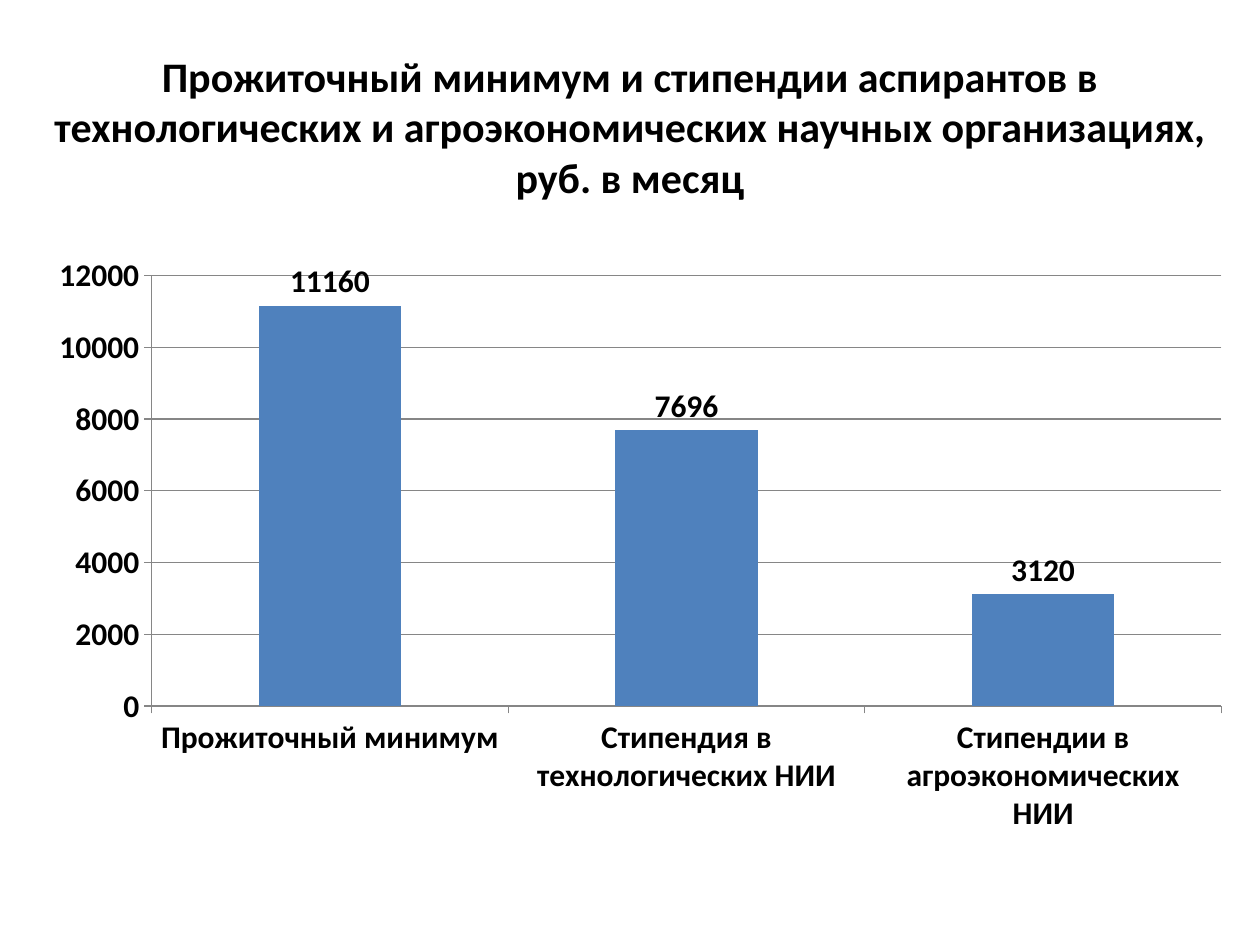
from pptx import Presentation
from pptx.chart.data import CategoryChartData
from pptx.dml.color import RGBColor
from pptx.enum.chart import XL_CHART_TYPE, XL_LABEL_POSITION, XL_TICK_MARK
from pptx.enum.text import MSO_ANCHOR, MSO_AUTO_SIZE, PP_ALIGN
from pptx.util import Cm, Pt

BLACK = RGBColor(0x00, 0x00, 0x00)
BLUE = RGBColor(0x4F, 0x81, 0xBD)
GRAY = RGBColor(0x86, 0x86, 0x86)
FONT = "Calibri"

TITLE = ("Прожиточный минимум и стипендии аспирантов в технологических "
         "и агроэкономических научных организациях, руб. в месяц")
INCOMES = {
    "Прожиточный минимум": 11160,
    "Стипендия в технологических НИИ": 7696,
    "Стипендии в агроэкономических НИИ": 3120,
}


def style_font(font, size):
    font.name = FONT
    font.size = Pt(size)
    font.bold = True
    font.color.rgb = BLACK


def set_title(slide, text):
    sp = slide.shapes.title
    sp.left, sp.top, sp.width, sp.height = Cm(0.5), Cm(0.76), Cm(24.4), Cm(3.56)
    tf = sp.text_frame
    tf.text = text
    tf.word_wrap = True
    tf.auto_size = MSO_AUTO_SIZE.NONE
    tf.vertical_anchor = MSO_ANCHOR.MIDDLE
    p = tf.paragraphs[0]
    p.alignment = PP_ALIGN.CENTER
    style_font(p.runs[0].font, 24)


def style_axis(axis):
    axis.major_tick_mark = XL_TICK_MARK.OUTSIDE
    axis.minor_tick_mark = XL_TICK_MARK.NONE
    axis.format.line.color.rgb = GRAY
    style_font(axis.tick_labels.font, 18)


def add_income_chart(slide, incomes):
    data = CategoryChartData()
    data.categories = list(incomes)
    data.add_series("Series 1", list(incomes.values()))
    chart = slide.shapes.add_chart(
        XL_CHART_TYPE.COLUMN_CLUSTERED,
        Cm(0.71), Cm(4.93), Cm(24.4), Cm(12.1), data).chart
    chart.has_title = False
    chart.has_legend = False
    style_font(chart.font, 18)

    # Axes and gridlines
    for axis in (chart.category_axis, chart.value_axis):
        style_axis(axis)
    value_axis = chart.value_axis
    value_axis.minimum_scale, value_axis.maximum_scale = 0, 12000
    value_axis.major_unit = 2000
    value_axis.has_major_gridlines = True
    value_axis.major_gridlines.format.line.color.rgb = GRAY

    # Columns and their value labels
    plot = chart.plots[0]
    plot.gap_width = 150
    plot.vary_by_categories = False
    fill = plot.series[0].format.fill
    fill.solid()
    fill.fore_color.rgb = BLUE
    plot.has_data_labels = True
    labels = plot.data_labels
    labels.show_value = True
    labels.position = XL_LABEL_POSITION.OUTSIDE_END
    style_font(labels.font, 18)


def main():
    prs = Presentation()
    prs.slide_width, prs.slide_height = Cm(25.4), Cm(19.05)
    slide = prs.slides.add_slide(prs.slide_layouts[5])  # title only
    set_title(slide, TITLE)
    add_income_chart(slide, INCOMES)
    prs.save("out.pptx")


if __name__ == "__main__":
    main()
